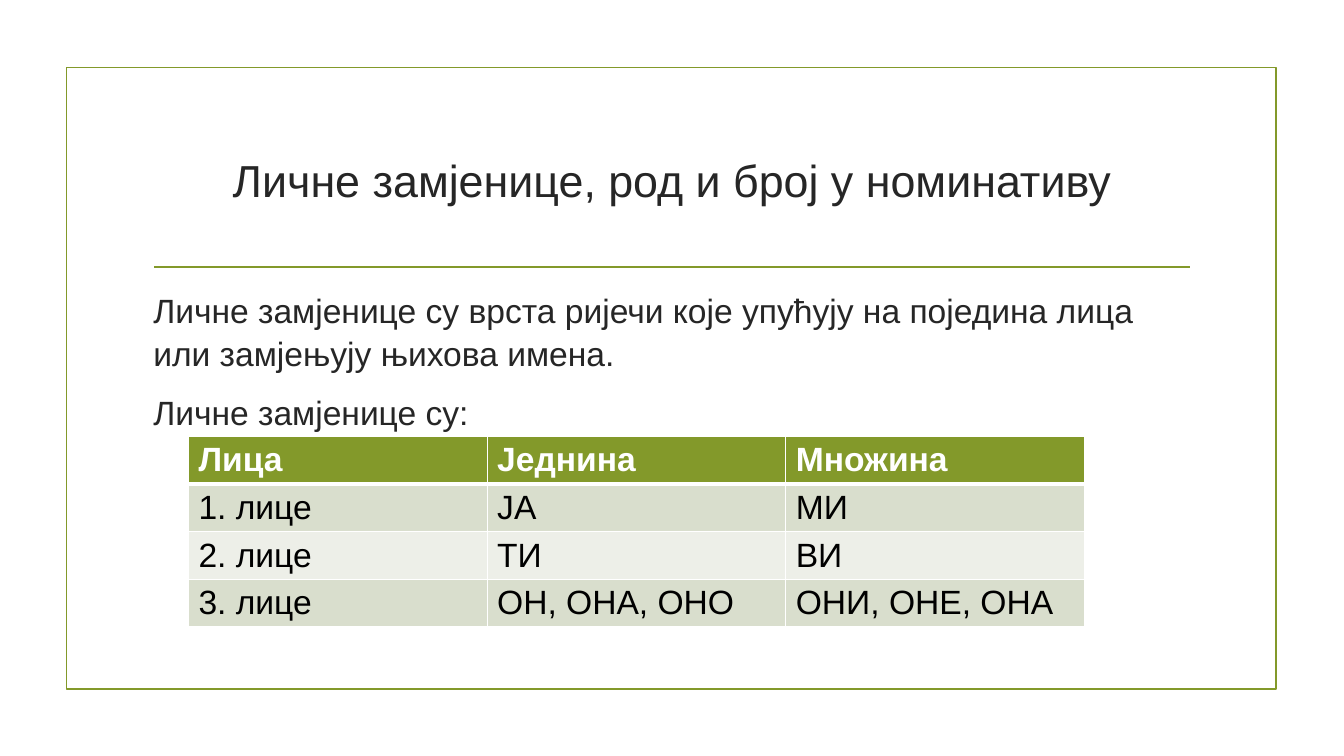
"""Build a slide on Serbian personal pronouns in the nominative."""
from dataclasses import dataclass

from lxml import etree
from pptx import Presentation
from pptx import util as u
from pptx.dml.color import RGBColor
from pptx.enum import shapes, text
from pptx.oxml import ns


@dataclass(frozen=True)
class Theme:
    """Colours, font and type sizes of the slide."""
    accent: str = "83992A"
    ink: str = "262626"
    black: str = "000000"
    white: str = "FFFFFF"
    bands: tuple = ("D9DECD", "EDEFE8")
    font: str = "Arial"
    title: int = 32
    body: int = 24
    rule: float = 1.25


THEME = Theme()
TITLE = "Личне замјенице, род и број у номинативу"
BODY = (
    "Личне замјенице су врста ријечи које упућују на поједина лица "
    "или замјењују њихова имена.",
    "Личне замјенице су:",
)
PRONOUNS = (
    ("Лица", "Једнина", "Множина"),
    ("1. лице", "ЈА", "МИ"),
    ("2. лице", "ТИ", "ВИ"),
    ("3. лице", "ОН, ОНА, ОНО", "ОНИ, ОНЕ, ОНА"),
)


def place(shape, left, top, width, height):
    """Move and size a shape in centimetres."""
    shape.left, shape.top = u.Cm(left), u.Cm(top)
    shape.width, shape.height = u.Cm(width), u.Cm(height)


def add_span(para, words, size, colour, bold=False):
    """Add one formatted run to a paragraph."""
    span = para.add_run()
    span.text = words
    span.font.name = THEME.font
    span.font.size = u.Pt(size)
    span.font.bold = bold
    span.font.color.rgb = RGBColor.from_string(colour)


def style_line(line):
    """Give a line the accent colour and rule width."""
    line.color.rgb = RGBColor.from_string(THEME.accent)
    line.width = u.Pt(THEME.rule)


def add_frame(page):
    """Draw the border around the page."""
    frame = page.shapes.add_shape(
        shapes.MSO_SHAPE.RECTANGLE, u.Cm(1.68), u.Cm(1.7), u.Cm(30.48), u.Cm(15.67))
    frame.shadow.inherit = False
    frame.fill.background()
    style_line(frame.line)


def add_rule(page):
    """Draw the line under the title."""
    rule = page.shapes.add_connector(
        shapes.MSO_CONNECTOR.STRAIGHT, u.Cm(3.89), u.Cm(6.73), u.Cm(30), u.Cm(6.73))
    style_line(rule.line)
    etree.SubElement(rule._element.spPr, ns.qn("a:effectLst"))


def fill_title(box):
    """Write the centred title."""
    place(box, 3.61, 2.72, 26.67, 3.63)
    frame = box.text_frame
    frame.auto_size = text.MSO_AUTO_SIZE.NONE
    frame.vertical_anchor = text.MSO_ANCHOR.MIDDLE
    para = frame.paragraphs[0]
    para.alignment = text.PP_ALIGN.CENTER
    add_span(para, TITLE, THEME.title, THEME.ink)


def fill_body(box):
    """Write the body paragraphs without bullets."""
    place(box, 3.61, 7.11, 26.67, 9.22)
    frame = box.text_frame
    frame.auto_size = text.MSO_AUTO_SIZE.NONE
    frame.vertical_anchor = text.MSO_ANCHOR.TOP
    for index, words in enumerate(BODY):
        para = frame.add_paragraph() if index else frame.paragraphs[0]
        props = para._p.get_or_add_pPr()
        props.set("marL", "0")
        props.set("indent", "0")
        etree.SubElement(props, ns.qn("a:buNone"))
        para.line_spacing = 1.07
        para.space_before = u.Pt(5.4 if index else 0)
        para.space_after = u.Pt(6)
        add_span(para, words, THEME.body, THEME.ink)


def add_borders(cell, top, bottom):
    """Add white cell borders, with top and bottom widths in points."""
    props = cell._tc.get_or_add_tcPr()
    for side, width in (("L", 1), ("R", 1), ("T", top), ("B", bottom)):
        line = etree.SubElement(props, ns.qn(f"a:ln{side}"), w=str(u.Pt(width)))
        fill = etree.SubElement(line, ns.qn("a:solidFill"))
        etree.SubElement(fill, ns.qn("a:srgbClr"), val=THEME.white)


def add_pronoun_table(page):
    """Add the table of persons, singular and plural."""
    rows, columns = len(PRONOUNS), len(PRONOUNS[0])
    table = page.shapes.add_table(
        rows, columns, u.Cm(4.75), u.Cm(11), u.Cm(22.58), u.Cm(1.2 * rows)).table
    for row, entries in enumerate(PRONOUNS):
        header = row == 0
        fill = THEME.accent if header else THEME.bands[(row - 1) % 2]
        colour = THEME.white if header else THEME.black
        for column, words in enumerate(entries):
            cell = table.cell(row, column)
            add_borders(cell, 3 if row == 1 else 1, 3 if header else 1)
            cell.fill.solid()
            cell.fill.fore_color.rgb = RGBColor.from_string(fill)
            add_span(cell.text_frame.paragraphs[0], words, THEME.body, colour, header)


def main():
    """Build and save the deck."""
    deck = Presentation()
    deck.slide_width, deck.slide_height = u.Cm(33.87), u.Cm(19.05)
    page = deck.slides.add_slide(deck.slide_layouts[1])
    fill_title(page.shapes.title)
    fill_body(page.placeholders[1])
    add_frame(page)
    add_rule(page)
    add_pronoun_table(page)
    deck.save("out.pptx")


if __name__ == "__main__":
    main()
